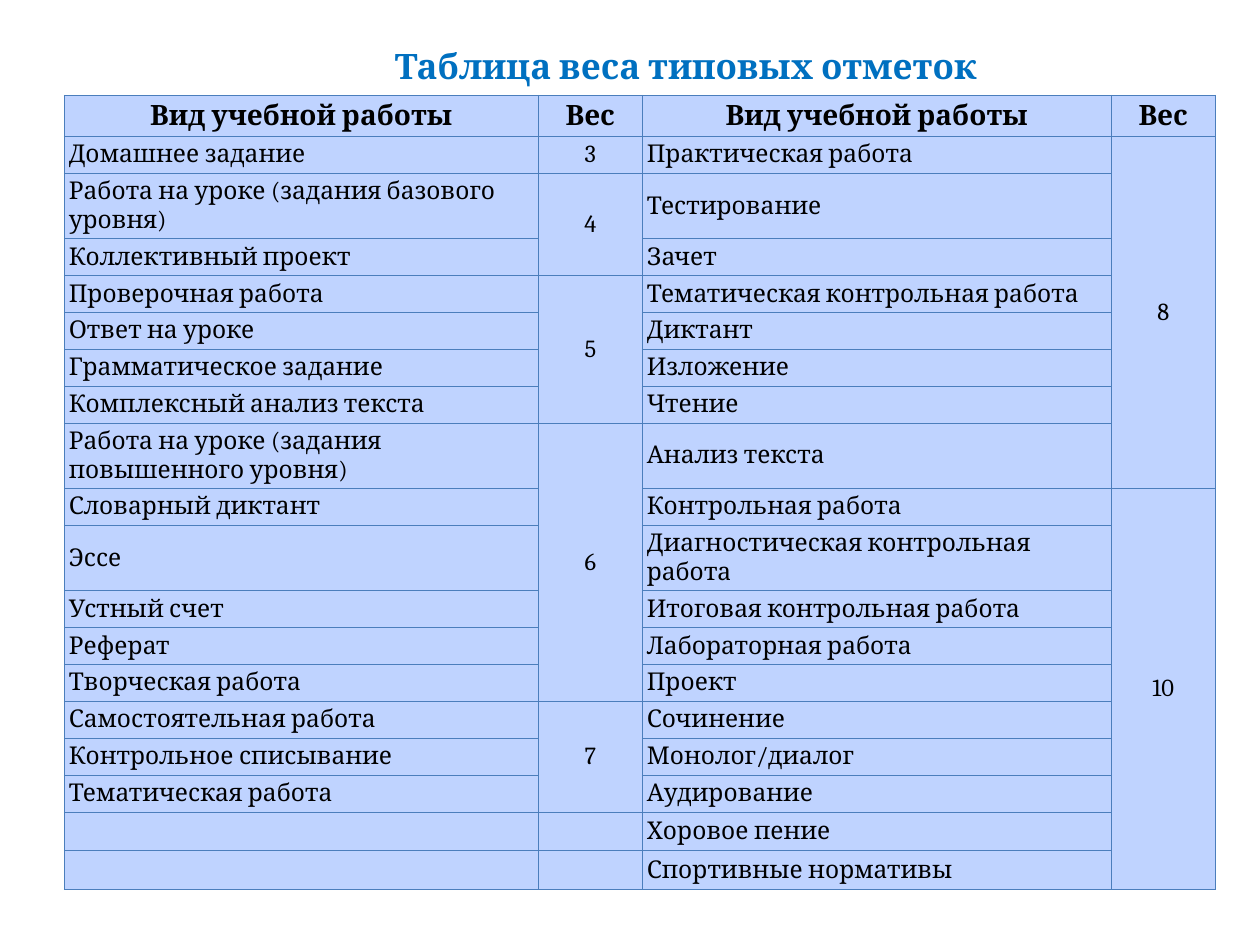
from lxml.etree import SubElement
from pptx import Presentation
from pptx.dml.color import RGBColor
from pptx.enum.text import MSO_ANCHOR, PP_ALIGN
from pptx.oxml.ns import qn
from pptx.util import Pt

THEME = {
    "font": "Cambria",
    "title": RGBColor.from_string("0070C0"),
    "text": RGBColor.from_string("000000"),
    "fill": RGBColor.from_string("BFD3FF"),
    "border": "4B7EBC",
    "title_size": Pt(20),
    "head_size": Pt(16),
    "body_size": Pt(14),
}

HEADER = ["Вид учебной работы", "Вес"] * 2

# Each group is a weight and the kinds of work that share it.
LEFT_GROUPS = [
    ("3", ["Домашнее задание"]),
    ("4", ["Работа на уроке (задания базового уровня)", "Коллективный проект"]),
    ("5", ["Проверочная работа", "Ответ на уроке", "Грамматическое задание",
           "Комплексный анализ текста"]),
    ("6", ["Работа на уроке (задания повышенного уровня)", "Словарный диктант",
           "Эссе", "Устный счет", "Реферат", "Творческая работа"]),
    ("7", ["Самостоятельная работа", "Контрольное списывание",
           "Тематическая работа"]),
]
RIGHT_GROUPS = [
    ("8", ["Практическая работа", "Тестирование", "Зачет",
           "Тематическая контрольная работа", "Диктант", "Изложение", "Чтение",
           "Анализ текста"]),
    ("10", ["Контрольная работа", "Диагностическая контрольная работа",
            "Итоговая контрольная работа", "Лабораторная работа", "Проект",
            "Сочинение", "Монолог/диалог", "Аудирование", "Хоровое пение",
            "Спортивные нормативы"]),
]
COL_WIDTHS = [270.8, 59.5, 267.9, 59.5]
ROW_COUNT = 19
ROW_HEIGHT, TALL_HEIGHT = 21, 34
TALL_ROWS = {2, 8, 10}
INSET = Pt(2.5)


def write(p, text, size, color, bold, align):
    p.alignment = align
    r = p.add_run()
    r.text = text
    style = {"name": THEME["font"], "size": size, "bold": bold}
    for name, value in style.items():
        setattr(r.font, name, value)
    r.font.color.rgb = color


def style_cell(cell):
    """Give the cell its insets, borders and fill."""
    for side in ("left", "right", "top", "bottom"):
        setattr(cell, f"margin_{side}", INSET)
    cell.vertical_anchor = MSO_ANCHOR.MIDDLE
    tc_pr = cell._tc.get_or_add_tcPr()
    for tag in ("a:lnL", "a:lnR", "a:lnT", "a:lnB"):
        ln = SubElement(tc_pr, qn(tag), w=str(Pt(0.75)))
        solid = SubElement(ln, qn("a:solidFill"))
        SubElement(solid, qn("a:srgbClr"), val=THEME["border"])
    cell.fill.solid()
    cell.fill.fore_color.rgb = THEME["fill"]


prs = Presentation()
prs.slide_width, prs.slide_height = Pt(720), Pt(540)
s = prs.slides.add_slide(prs.slide_layouts[5])

title = s.shapes.title
box = {"left": Pt(111), "top": Pt(0), "width": Pt(561.6), "height": Pt(53.3)}
for name, value in box.items():
    setattr(title, name, value)
tf = title.text_frame
tf.word_wrap = True
tf.vertical_anchor = MSO_ANCHOR.BOTTOM
write(tf.paragraphs[0], "Таблица веса типовых отметок", THEME["title_size"],
      THEME["title"], True, PP_ALIGN.CENTER)

frame = s.shapes.add_table(ROW_COUNT, len(COL_WIDTHS), Pt(36.8), Pt(54.6),
                           Pt(sum(COL_WIDTHS)), Pt(466.6))
table = frame.table
for column, width in zip(table.columns, COL_WIDTHS):
    column.width = Pt(width)
for i, row in enumerate(table.rows):
    row.height = Pt(TALL_HEIGHT if i in TALL_ROWS else ROW_HEIGHT)
frame.height = Pt(466.6)
for cell in table.iter_cells():
    style_cell(cell)

for col, text in enumerate(HEADER):
    write(table.cell(0, col).text_frame.paragraphs[0], text,
          THEME["head_size"], THEME["text"], True, PP_ALIGN.CENTER)

for col, groups in ((0, LEFT_GROUPS), (2, RIGHT_GROUPS)):
    row = 1
    for weight, works in groups:
        last = row + len(works) - 1
        weight_cell = table.cell(row, col + 1)
        if last > row:
            weight_cell.merge(table.cell(last, col + 1))
        write(weight_cell.text_frame.paragraphs[0], weight,
              THEME["body_size"], THEME["text"], False, PP_ALIGN.CENTER)
        for i, work in enumerate(works, row):
            write(table.cell(i, col).text_frame.paragraphs[0], work,
                  THEME["body_size"], THEME["text"], False, PP_ALIGN.LEFT)
        row = last + 1

# Empty cells need a small type size too, or they stretch their rows.
for cell in table.iter_cells():
    if not cell.text_frame.text:
        p = cell.text_frame.paragraphs[0]
        SubElement(p._p, qn("a:endParaRPr"),
                   sz=str(int(THEME["body_size"].pt * 100)))

prs.save("out.pptx")
